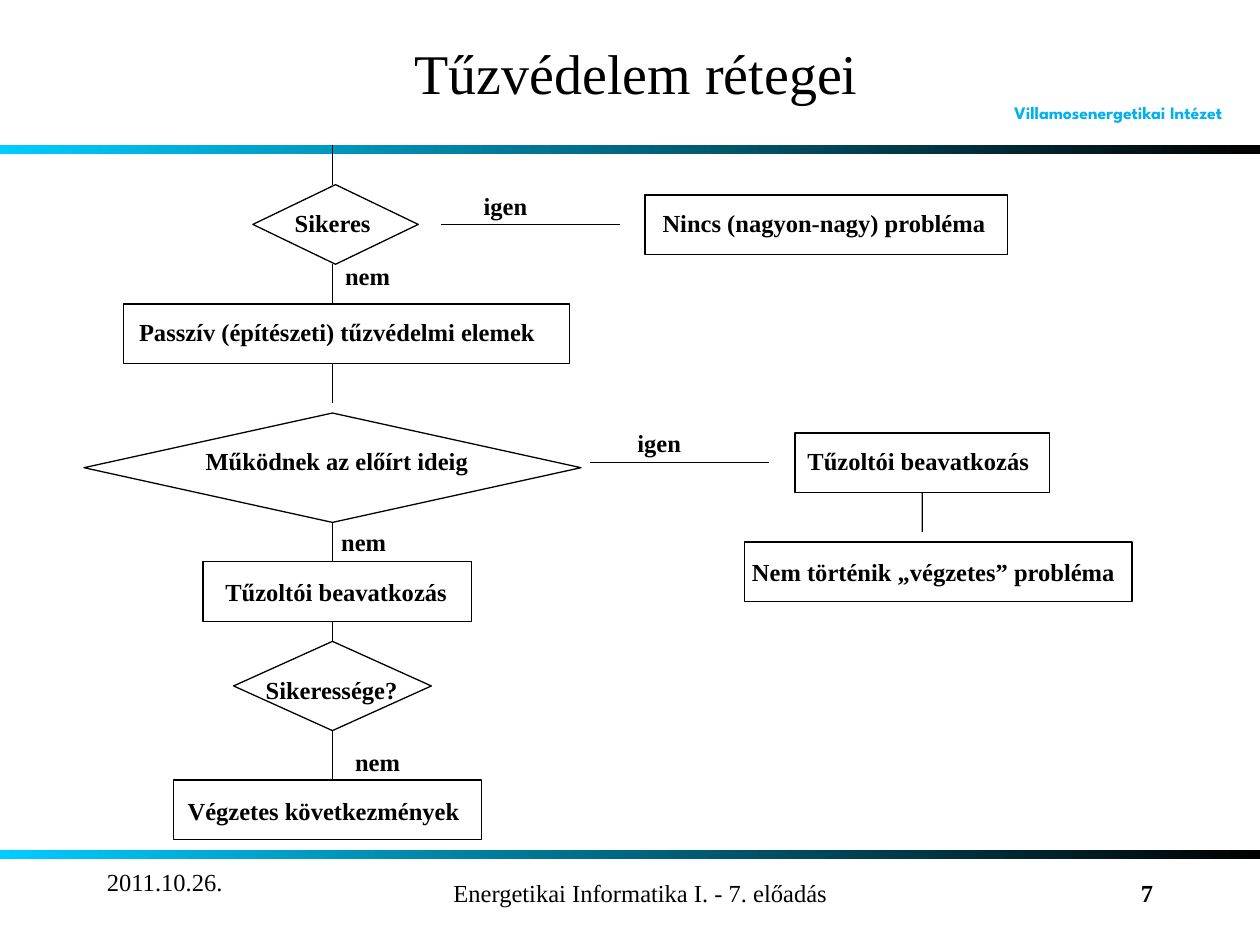
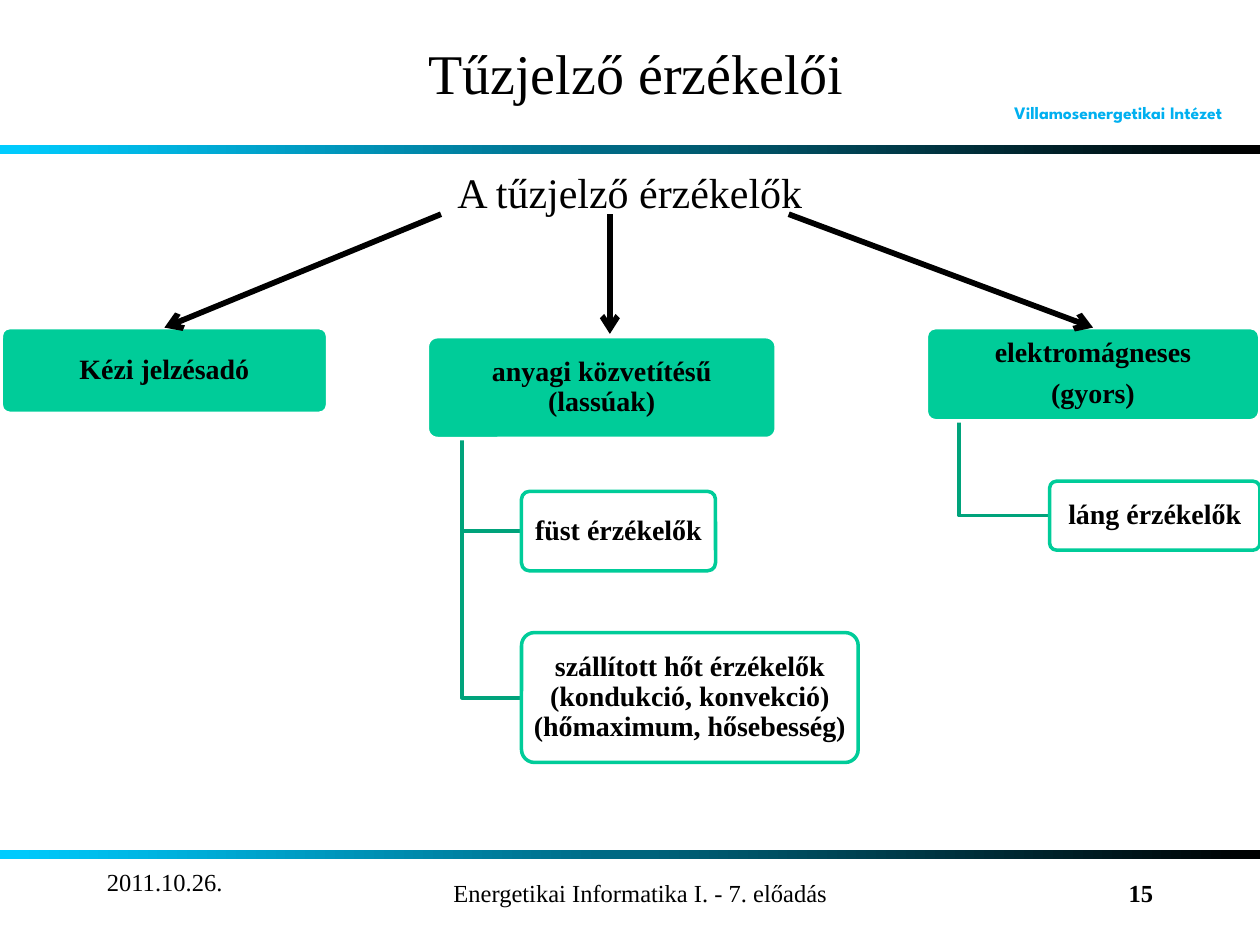
"""Build two fire protection slides: a decision flow and a tree of detectors."""
from dataclasses import dataclass
from lxml.etree import SubElement
from pptx import Presentation
from pptx.dml.color import RGBColor
from pptx.enum.shapes import MSO_CONNECTOR, MSO_SHAPE
from pptx.enum.text import MSO_ANCHOR, PP_ALIGN
from pptx.oxml.ns import qn
from pptx.util import Pt


@dataclass(frozen=True)
class Theme:
    ink: str = "000000"
    white: str = "FFFFFF"
    cyan: str = "00CCFF"
    blue: str = "00B0F0"
    green: str = "00CC99"
    dark: str = "00A37B"
    font: str = "Times New Roman"
    brand: str = "League Spartan"
    title: int = 32
    head: int = 24
    node: int = 16
    body: int = 14
    tag: int = 10
    thin: float = 0.75
    mid: float = 2
    thick: float = 3.25


look = Theme()
left, center, right = PP_ALIGN.LEFT, PP_ALIGN.CENTER, PP_ALIGN.RIGHT
top, middle = MSO_ANCHOR.TOP, MSO_ANCHOR.MIDDLE


def write(text, page=None, spot=None, shape=None, size=look.body, font=look.font,
          color=look.ink, bold=False, align=left, anchor=top, pad=(7.2, 3.6),
          pitch=None, after=None):
    shape = shape or page.shapes.add_textbox(*map(Pt, spot))
    frame = shape.text_frame
    frame.word_wrap = True
    frame.vertical_anchor = anchor
    frame.margin_left = frame.margin_right = Pt(pad[0])
    frame.margin_top = frame.margin_bottom = Pt(pad[1])
    frame.text = text
    for para in frame.paragraphs:
        para.alignment = align
        if pitch:
            para.line_spacing = pitch
        if after:
            para.space_after = Pt(after)
        for run in para.runs:
            run.font.name, run.font.size, run.font.bold = font, Pt(size), bold
            run.font.color.rgb = RGBColor.from_string(color)


def style(shape, fill=None, line=None, wide=look.thin):
    shape.shadow.inherit = False
    if fill:
        shape.fill.solid()
        shape.fill.fore_color.rgb = RGBColor.from_string(fill)
    else:
        shape.fill.background()
    if line:
        shape.line.color.rgb = RGBColor.from_string(line)
        shape.line.width = Pt(wide)
    else:
        shape.line.fill.background()
    return shape


deck = Presentation()
deck.slide_width, deck.slide_height = Pt(720), Pt(540)
pages = []
for title, number in (("Tűzvédelem rétegei", "7"), ("Tűzjelző érzékelői", "15")):
    page = deck.slides.add_slide(deck.slide_layouts[6])
    pages.append(page)
    for y in (82.8, 485.5):
        band = style(page.shapes.add_shape(MSO_SHAPE.RECTANGLE, 0, Pt(y), Pt(720), Pt(5.5)))
        band.fill.gradient()
        band.fill.gradient_angle = 0
        for stop, color in zip(band.fill.gradient_stops, (look.cyan, look.ink)):
            stop.color.rgb = RGBColor.from_string(color)
    write("Villamosenergetikai Intézet", page, (572.4, 54.7, 147.6, 19.4), size=look.tag,
          font=look.brand, color=look.blue, bold=True, anchor=middle)
    write(title, page, (93.6, 20.2, 540, 41.8), size=look.title, align=center, anchor=middle)
    write("2011.10.26.", page, (54, 491.8, 150, 36))
    write("Energetikai Informatika I. - 7. előadás", page, (150, 498, 432, 30), align=center)
    write(number, page, (516, 498, 150, 30), bold=True, align=right)

flow, tree = pages
stem = 190
rect, choice = MSO_SHAPE.RECTANGLE, MSO_SHAPE.FLOWCHART_DECISION
steps = [
    (choice, (144.5, 105.5, 94.5, 45.5), "Sikeres", (161.3, 115.2, 61.2)),
    (rect, (368.6, 111.4, 207, 34), "Nincs (nagyon-nagy) probléma", (371.5, 115.2, 205.2)),
    (rect, (70.6, 173.7, 255, 34), "Passzív (építészeti) tűzvédelmi elemek",
     (72.4, 177.8, 259.2)),
    (choice, (48, 236, 284, 62.5), "Működnek az előírt ideig", (110.4, 251.3, 165.6)),
    (rect, (454.3, 247.4, 145.5, 34), "Tűzoltói beavatkozás", (454.3, 251.3, 145.4)),
    (rect, (425.6, 309.7, 221.3, 34), "Nem történik „végzetes” probléma",
     (422.6, 314.6, 224.6)),
    (rect, (116, 321, 153.4, 34), "Tűzoltói beavatkozás", (121.7, 326.2, 149)),
    (choice, (133.5, 366.5, 113, 51), "Sikeressége?", (144.7, 382.3, 99.4)),
    (rect, (99.2, 445.7, 176, 34), "Végzetes következmények", (100.1, 451.4, 180.7)),
]
nodes = []
for kind, spot, text, place in steps:
    nodes.append(style(flow.shapes.add_shape(kind, *map(Pt, spot)), line=look.ink))
    write(text, flow, (*place, 23.8), bold=True)
for text, x, y in (("igen", 269.3, 105.8), ("igen", 357.1, 241.2), ("nem", 190.1, 145.4),
                   ("nem", 187.9, 297.4), ("nem", 195.8, 423.4)):
    write(text, flow, (x, y, 41.8, 23.8), bold=True)

write("A tűzjelző érzékelők", tree, (42.5, 60.5, 635, 98.6), size=look.head,
      align=center, anchor=middle)
for points in (((264, 250.6), (264, 303.5), (298, 303.5)),
               ((264, 250.6), (264, 398.8), (298, 398.8)),
               ((548, 240.5), (548, 294.5), (599.8, 294.5))):
    pen = tree.shapes.build_freeform(*map(Pt, points[0]))
    pen.add_line_segments([tuple(map(Pt, point)) for point in points[1:]], close=False)
    style(pen.convert_to_shape(), line=look.dark, wide=look.mid)

cards = [
    (True, (0.7, 187.2, 186.5, 49), "Kézi jelzésadó"),
    (True, (244.2, 192.4, 199.4, 58.2), "anyagi közvetítésű\v(lassúak)"),
    (True, (529.3, 187.2, 190.6, 53.3), "elektromágneses\n(gyors)"),
    (False, (298, 280.8, 110.9, 45.4), "füst érzékelők"),
    (False, (298, 361.5, 192.4, 74.2),
     "szállított hőt érzékelők\v(kondukció, konvekció)\v(hőmaximum, hősebesség)"),
    (False, (599.8, 275, 120.2, 39.4), "láng érzékelők"),
]
heads = []
for main, spot, text in cards:
    card = tree.shapes.add_shape(MSO_SHAPE.ROUNDED_RECTANGLE, *map(Pt, spot))
    card.adjustments[0] = 0.1
    if main:
        style(card, look.green, look.white, look.mid)
        heads.append(card)
    else:
        style(card, look.white, look.green, look.mid)
        tint = card._element.spPr.find(qn("a:solidFill"))[0]
        SubElement(tint, qn("a:alpha")).set("val", "90000")
    write(text, shape=card, size=look.node, bold=True, align=center, anchor=middle,
          pad=(2.2, 1.4), pitch=0.9, after=6)

links = [
    (flow, (252, 128.3, 354.2, 128.3), None, None),
    (flow, (337, 264.2, 439.2, 264.2), None, None),
    (flow, (stem, 82.8, stem, 105.5), None, None),
    (flow, (stem, 151, stem, 173.7), None, None),
    (flow, (stem, 207.7, stem, 230.4), None, None),
    (flow, (stem, 298.5, stem, 321), nodes[3], None),
    (flow, (stem, 355, stem, 366.5), None, nodes[7]),
    (flow, (stem, 417.5, stem, 445.7), nodes[7], None),
    (flow, (527, 281.4, 527, 304), nodes[4], None),
    (tree, (252, 122.4, 93.6, 185), None, heads[0]),
    (tree, (348.5, 122.4, 348.5, 190.8), None, None),
    (tree, (450.7, 122.4, 620.6, 185), None, heads[2]),
]
for page, ends, source, goal in links:
    link = page.shapes.add_connector(MSO_CONNECTOR.STRAIGHT, *map(Pt, ends))
    if source:
        link.begin_connect(source, 2)
    if goal:
        link.end_connect(goal, 0)
    link.line.color.rgb = RGBColor.from_string(look.ink)
    link.line.width = Pt(look.thick if page is tree else look.thin)
    if page is tree:
        SubElement(link.line._get_or_add_ln(), qn("a:tailEnd")).set("type", "arrow")
    SubElement(link._element.spPr, qn("a:effectLst"))

deck.save("out.pptx")
